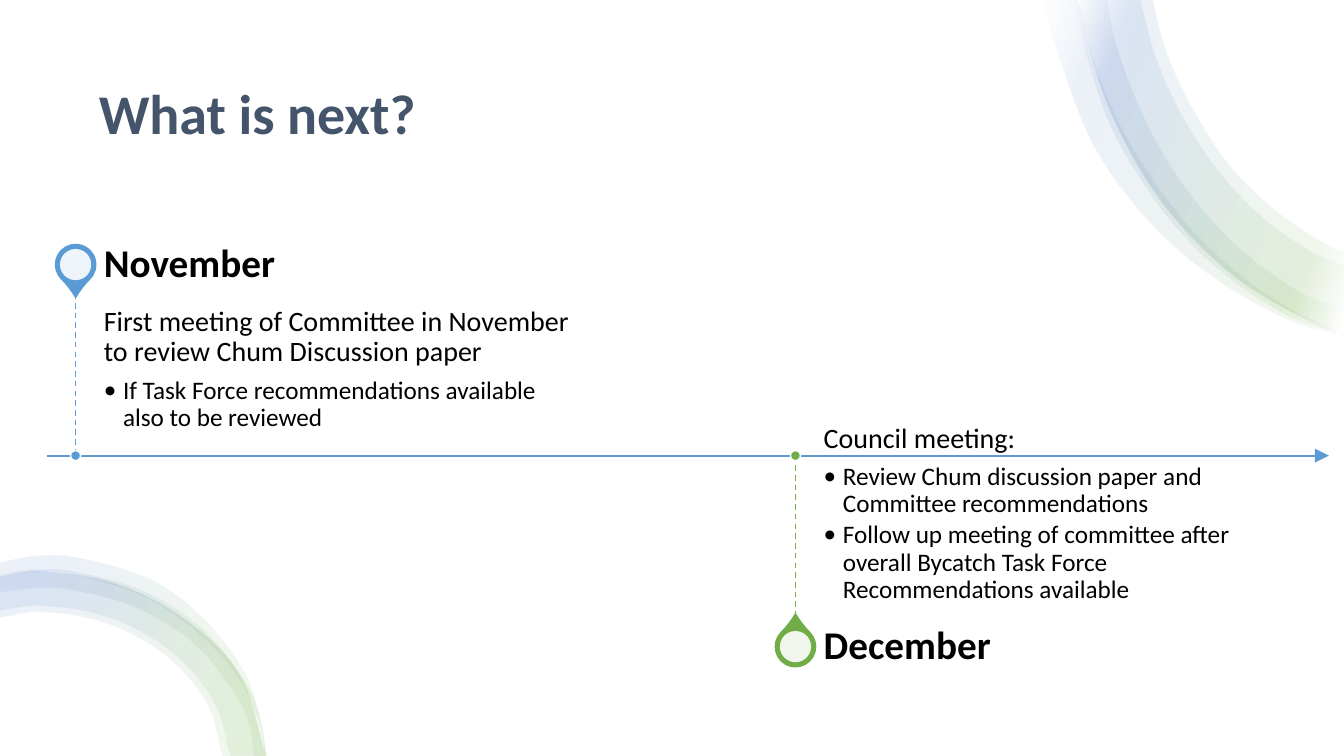
from dataclasses import dataclass
from math import dist
from lxml.etree import SubElement
from pptx import Presentation
from pptx.dml.color import RGBColor
from pptx.enum.dml import MSO_LINE as Dash
from pptx.enum.shapes import MSO_CONNECTOR as Link, MSO_SHAPE as Form
from pptx.enum.text import MSO_ANCHOR as Anchor, PP_ALIGN as Align
from pptx.oxml import parse_xml
from pptx.oxml.ns import nsdecls, qn
from pptx.util import Emu, Inches, Pt

Spot = tuple[float, float]
Edge = list[Spot]
Box = tuple[float, float, float, float]


@dataclass(frozen=True)
class Theme:
    font: str = "Calibri"
    title: str = "44546A"
    ink: str = "000000"
    white: str = "FFFFFF"
    blue: str = "5B9BD5"
    green: str = "70AD47"
    deep: str = "4472C4"
    big: int = 40
    head: int = 28
    lead: int = 20
    item: int = 18


@dataclass(frozen=True)
class Row:
    text: str
    size: int
    tone: str
    bold: bool = False
    after: int = 0
    bullet: bool = False


@dataclass(frozen=True)
class Stage:
    month: str
    x: float
    tone: str
    above: bool
    lead: str
    items: tuple[str, ...]


@dataclass(frozen=True)
class Band:
    outer: Edge
    inner: Edge
    fade: bool = True


T = Theme()
COLS, ROWS = 13.33, 7.5
AXIS, STEM, HEAD, WIDE, GAP = 4.52, 1.61, 0.57, 4.62, 0.28

STAGES = [
    Stage("November", 0.75, T.blue, True,
          "First meeting of Committee in November to review Chum Discussion paper",
          ("If Task Force recommendations available also to be reviewed",)),
    Stage("December", 7.89, T.green, False, "Council meeting:",
          ("Review Chum discussion paper and Committee recommendations",
           "Follow up meeting of committee after overall Bycatch Task Force "
           "Recommendations available")),
]
TOP = [(10.68, 0), (11, 1.07), (11.52, 2), (12.24, 2.74), (13.09, 3.24), (13.33, 3.32)]
LOW = [(2.63, 7.5), (2.37, 6.69), (1.85, 6.16), (1.17, 5.8), (0.4, 5.67), (0, 5.72)]
BANDS = [
    Band([(10.37, 0), (10.41, 0.26), (10.78, 1.31), (11.16, 1.92), (11.65, 2.45),
          (12.21, 2.87), (12.82, 3.19), (13.33, 3.35)],
         [(10.69, 0), (10.82, 0.52), (11.06, 1.15), (11.4, 1.73), (11.81, 2.27),
          (12.3, 2.73), (12.86, 3.1), (13.33, 3.28)]),
    Band(TOP, [(11.43, 0), (11.58, 0.55), (11.85, 1.12), (12.19, 1.64), (12.61, 2.06),
               (13.07, 2.38), (13.33, 2.51)]),
    Band([(10.65, 0), (10.68, 0.2), (10.99, 1.19), (11.32, 1.79), (11.73, 2.33),
          (12.23, 2.79), (12.79, 3.14), (13.33, 3.33)],
         [(10.98, 0), (11.07, 0.44), (11.29, 1.04), (11.58, 1.6), (11.95, 2.11),
          (12.39, 2.55), (12.9, 2.9), (13.33, 3.08)]),
    Band(TOP, [(11.31, 0), (11.47, 0.59), (11.74, 1.18), (12.1, 1.72), (12.53, 2.17),
               (13.01, 2.5), (13.33, 2.64)]),
    Band(LOW, [(2.2, 7.5), (2.06, 7), (1.66, 6.52), (1.07, 6.19), (0.4, 6.07), (0, 6.13)], False),
    Band(LOW, [(2.28, 7.5), (2.12, 6.97), (1.7, 6.47), (1.09, 6.13), (0.4, 6.01), (0, 6.06)], False),
    Band([(2.63, 7.5), (2.59, 7.19), (2.47, 6.85), (2.03, 6.27), (1.42, 5.87),
          (0.69, 5.67), (0.31, 5.66), (0, 5.71)],
         [(2.51, 7.5), (2.47, 7.21), (2.34, 6.91), (1.92, 6.39), (1.34, 6.03),
          (0.67, 5.85), (0.33, 5.84), (0, 5.88)], False),
    Band([(2.64, 7.5), (2.5, 6.87), (2.33, 6.53), (1.96, 6.09), (1.48, 5.75),
          (0.71, 5.53), (0.31, 5.53), (0, 5.59)],
         [(2.62, 7.5), (2.58, 7.22), (2.45, 6.89), (2.25, 6.58), (1.86, 6.2),
          (1.39, 5.91), (0.69, 5.7), (0.32, 5.68), (0, 5.72)], False),
]

deck = Presentation()
deck.slide_width, deck.slide_height = Inches(13.333), Inches(7.5)
shapes = deck.slides.add_slide(deck.slide_layouts[6]).shapes


def col(n: float) -> Emu:
    return Emu(round(deck.slide_width * n / COLS))


def row(n: float) -> Emu:
    return Emu(round(deck.slide_height * n / ROWS))


def bend(edge: Edge) -> list[Edge]:
    """Give each step of an edge its two Bezier handles and its end."""
    pts = [edge[0], *edge, edge[-1]]
    out = []
    for a, b, c, d in zip(pts, pts[1:], pts[2:], pts[3:]):
        span = dist(b, c)
        u, v = span / (dist(a, b) + span) / 3, span / (span + dist(c, d)) / 3
        out.append([(b[0] + (c[0] - a[0]) * u, b[1] + (c[1] - a[1]) * u),
                    (c[0] - (d[0] - b[0]) * v, c[1] - (d[1] - b[1]) * v), c])
    return out


def draw_band(band: Band) -> None:
    back = band.inner[::-1]
    spots = [(col(x), row(y)) for x, y in band.outer + back]
    pen = shapes.build_freeform(*spots[0], scale=1.0)
    pen.add_line_segments(spots[1:], close=True)
    form = pen.convert_to_shape()
    form.shadow.inherit = False
    form.line.fill.background()
    form.fill.solid()
    props = form.element.spPr
    curves = [*bend(band.outer), None, *bend(back)]
    for line, curve in zip(list(props.iter(qn("a:lnTo"))), curves):
        if curve:
            line.tag = qn("a:cubicBezTo")
            line.remove(line[0])
            for x, y in curve:
                SubElement(line, qn("a:pt"), x=str(col(x) - form.left), y=str(row(y) - form.top))
    tones = [(16, T.green), (85, T.deep)]
    if band.fade:
        tones = [(2, T.white), *tones, (100, T.white)]
    stops = "".join(
        f'<a:gs pos="{pos}000"><a:srgbClr val="{tone}"><a:alpha val="10000"/></a:srgbClr></a:gs>'
        for pos, tone in tones)
    grad = parse_xml(f'<a:gradFill {nsdecls("a")}><a:gsLst>{stops}</a:gsLst>'
                     '<a:lin ang="12000000" scaled="0"/></a:gradFill>')
    props.replace(props.find(qn("a:solidFill")), grad)


def draw_line(start: Spot, end: Spot, tone: str, width: float, axis: bool = False) -> None:
    link = shapes.add_connector(Link.STRAIGHT, col(start[0]), row(start[1]),
                                col(end[0]), row(end[1]))
    link.line.color.rgb = RGBColor.from_string(tone)
    link.line.width = Pt(width)
    if axis:
        SubElement(link.line._get_or_add_ln(), qn("a:tailEnd"), type="triangle", w="lg", len="lg")
    else:
        link.line.dash_style = Dash.DASH
    SubElement(link.element.spPr, qn("a:effectLst"))


def draw_form(kind: Form, box: Box, fill: str, edge: str = ""):
    """Draw a preset shape, its box given by centre and size."""
    x, y, w, h = box
    form = shapes.add_shape(kind, col(x - w / 2), row(y - h / 2), col(w), row(h))
    form.shadow.inherit = False
    form.fill.solid()
    form.fill.fore_color.rgb = RGBColor.from_string(fill)
    if edge:
        form.line.color.rgb = RGBColor.from_string(edge)
        form.line.width = Pt(1)
    else:
        form.line.fill.background()
    return form


def draw_text(box: Box, pad: Box, anchor: Anchor, rows: list[Row]) -> None:
    x, y, w, h = box
    frame = shapes.add_textbox(col(x), row(y), col(w), row(h)).text_frame
    frame.word_wrap, frame.vertical_anchor = True, anchor
    frame.margin_left, frame.margin_right = col(pad[0]), col(pad[2])
    frame.margin_top, frame.margin_bottom = row(pad[1]), row(pad[3])
    for i, item in enumerate(rows):
        para = frame.add_paragraph() if i else frame.paragraphs[0]
        para.alignment, para.line_spacing = Align.LEFT, 0.9
        props = para._p.get_or_add_pPr()
        SubElement(SubElement(props, qn("a:spcAft")), qn("a:spcPct"), val=f"{item.after}000")
        if item.bullet:
            props.set("marL", str(col(0.19)))
            props.set("indent", str(-col(0.19)))
            SubElement(props, qn("a:buFont"), typeface=T.font)
            SubElement(props, qn("a:buChar"), char="•")
        run = para.add_run()
        run.text = item.text
        run.font.name, run.font.size, run.font.bold = T.font, Pt(item.size), item.bold
        run.font.color.rgb = RGBColor.from_string(item.tone)


def draw_stage(stage: Stage) -> None:
    x, left = stage.x, stage.x + GAP
    body = AXIS - STEM if stage.above else AXIS
    head = body - HEAD if stage.above else body + STEM
    mid = head + HEAD / 2
    pin = draw_form(Form.TEAR, (x, mid, 0.4, 0.4), stage.tone, stage.tone)
    pin.adjustments[0] = 1.15
    pin.rotation = 135 if stage.above else 315
    hole = draw_form(Form.OVAL, (x, mid, 0.31, 0.31), T.white)
    tone = hole.element.spPr.find(qn("a:solidFill")).find(qn("a:srgbClr"))
    SubElement(tone, qn("a:alpha"), val="90000")
    rows = [Row(stage.lead, T.lead, T.ink, after=35)]
    rows += [Row(text, T.item, T.ink, after=15, bullet=True) for text in stage.items]
    pad = (0, 0.14, 0, 0.21) if stage.above else (0, 0.21, 0.14, 0.14)
    draw_text((left, body, WIDE, STEM), pad, Anchor.TOP if stage.above else Anchor.BOTTOM, rows)
    draw_text((left, head, WIDE, HEAD), (0, 0, 0.19, 0), Anchor.MIDDLE,
              [Row(stage.month, T.head, T.ink, bold=True, after=35)])
    draw_line((x, body), (x, body + STEM), stage.tone, 1)
    draw_form(Form.OVAL, (x, AXIS, 0.1, 0.1), stage.tone, T.white)


draw_form(Form.RECTANGLE, (COLS / 2, ROWS / 2, COLS, ROWS), T.white)
draw_text((0.88, 0.5, 11.57, 1.3), (0.1, 0.05, 0.1, 0.05), Anchor.MIDDLE,
          [Row("What is next?", T.big, T.title, bold=True)])
for band in BANDS:
    draw_band(band)
draw_line((0.47, AXIS), (13.18, AXIS), T.blue, 1.5, axis=True)
for stage in STAGES:
    draw_stage(stage)
deck.save("out.pptx")
